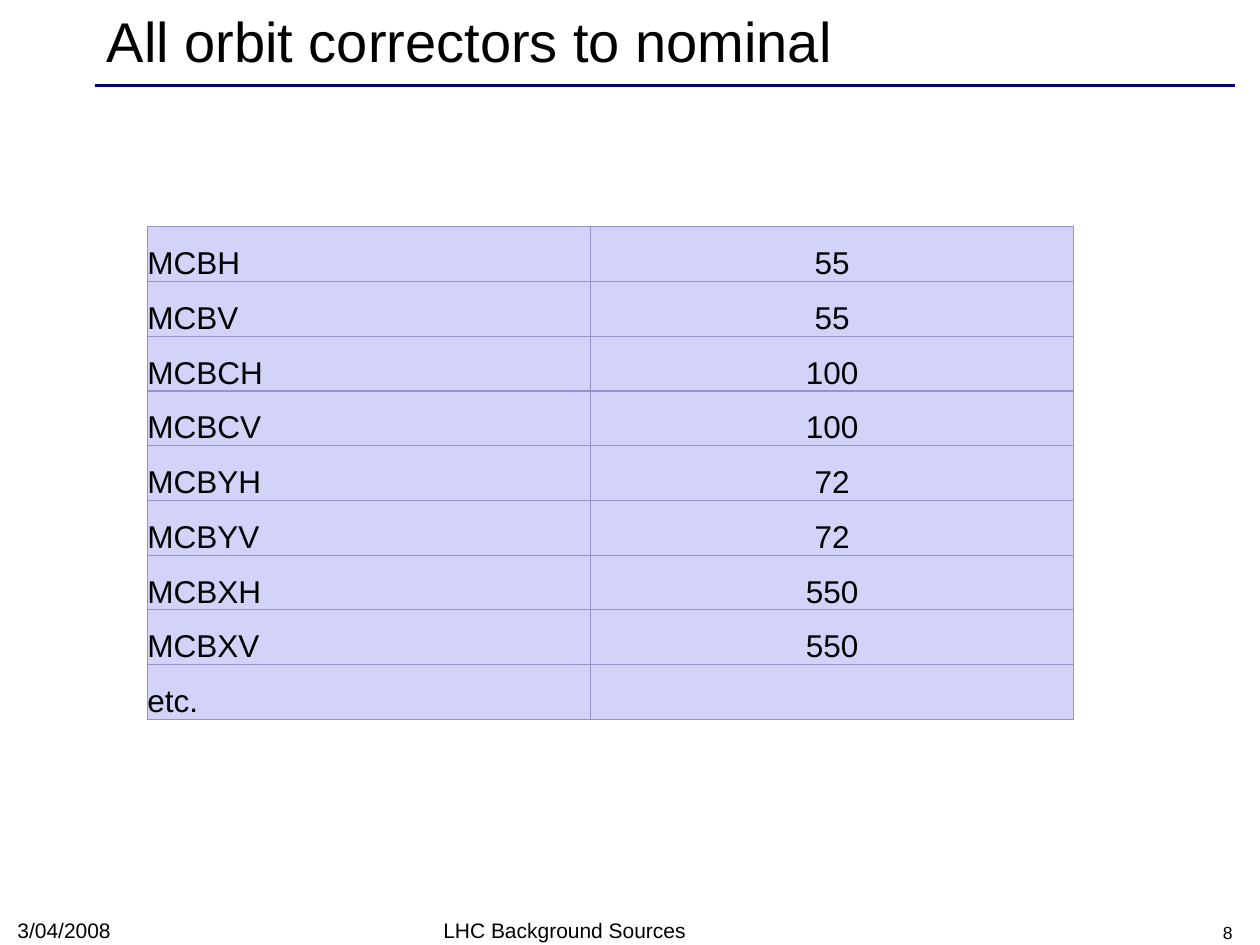
"""Build the slide listing the nominal settings of the orbit correctors."""
from dataclasses import dataclass

from lxml import etree
from pptx import Presentation
from pptx.dml.color import RGBColor
from pptx.enum import shapes, text
from pptx.oxml import ns
from pptx.util import Inches, Length, Pt


@dataclass(frozen=True)
class Theme:
    font: str = "Arial"
    ink: str = "000000"
    rule: str = "00007D"
    cell: str = "D3D3F9"
    border: str = "9494C9"
    title_size: float = 32
    table_size: float = 18
    footer_size: float = 12
    page_size: float = 10
    rule_width: float = 2
    border_width: float = 0.75


@dataclass(frozen=True)
class Label:
    wording: str
    left: float
    top: float
    width: float
    height: float
    size: float
    anchor: text.MSO_ANCHOR = text.MSO_ANCHOR.BOTTOM
    align: text.PP_ALIGN = text.PP_ALIGN.LEFT


@dataclass(frozen=True)
class Corrector:
    name: str
    nominal: str


THEME = Theme()
LABELS = (
    Label("All orbit correctors to nominal", 0.75, 0.03, 9, 0.57,
          THEME.title_size, text.MSO_ANCHOR.MIDDLE),
    Label("LHC Background Sources", 3.42, 7.25, 3.17, 0.28, THEME.footer_size),
    Label("8", 7.55, 7.25, 2.33, 0.28, THEME.page_size, align=text.PP_ALIGN.RIGHT),
    Label("3/04/2008", 0.04, 7.24, 2.33, 0.29, THEME.footer_size),
)
CORRECTORS = (
    Corrector("MCBH", "55"),
    Corrector("MCBV", "55"),
    Corrector("MCBCH", "100"),
    Corrector("MCBCV", "100"),
    Corrector("MCBYH", "72"),
    Corrector("MCBYV", "72"),
    Corrector("MCBXH", "550"),
    Corrector("MCBXV", "550"),
    Corrector("etc.", ""),
)
COLUMN_WIDTHS = (3.52, 3.83)
COLUMN_ALIGNS = (text.PP_ALIGN.LEFT, text.PP_ALIGN.CENTER)
TABLE_HEIGHT = 3.91


def write(paragraph, wording: str, size: float, align: text.PP_ALIGN) -> None:
    paragraph.text = wording
    paragraph.alignment = align
    paragraph.font.name = THEME.font
    paragraph.font.size = Pt(size)
    paragraph.font.color.rgb = RGBColor.from_string(THEME.ink)


def draw_label(slide, label: Label) -> None:
    place = map(Inches, (label.left, label.top, label.width, label.height))
    frame = slide.shapes.add_textbox(*place).text_frame
    frame.word_wrap = True
    frame.vertical_anchor = label.anchor
    write(frame.paragraphs[0], label.wording, label.size, label.align)


def draw_rule(slide) -> None:
    height = Inches(0.68)
    rule = slide.shapes.add_connector(
        shapes.MSO_CONNECTOR.STRAIGHT, Inches(0.75), height, Inches(9.8), height)
    rule.line.color.rgb = RGBColor.from_string(THEME.rule)
    rule.line.width = Pt(THEME.rule_width)
    etree.SubElement(rule._element.spPr, ns.qn("a:effectLst"))


def add_borders(cell) -> None:
    properties = cell._tc.get_or_add_tcPr()
    for position, side in enumerate(("lnL", "lnR", "lnT", "lnB")):
        border = etree.Element(ns.qn(f"a:{side}"), w=str(Pt(THEME.border_width)))
        fill = etree.SubElement(border, ns.qn("a:solidFill"))
        etree.SubElement(fill, ns.qn("a:srgbClr"), val=THEME.border)
        properties.insert(position, border)


def draw_cell(cell, wording: str, align: text.PP_ALIGN) -> None:
    cell.margin_left = cell.margin_right = Inches(0)
    cell.margin_top = cell.margin_bottom = Inches(0)
    cell.vertical_anchor = text.MSO_ANCHOR.BOTTOM
    cell.fill.solid()
    cell.fill.fore_color.rgb = RGBColor.from_string(THEME.cell)
    add_borders(cell)
    write(cell.text_frame.paragraphs[0], wording, THEME.table_size, align)


def draw_settings(slide, correctors: tuple[Corrector, ...]) -> None:
    height: Length = Inches(TABLE_HEIGHT)
    settings = slide.shapes.add_table(
        len(correctors), len(COLUMN_WIDTHS), Inches(1.17), Inches(1.8),
        Inches(sum(COLUMN_WIDTHS)), height).table
    settings.first_row = settings.horz_banding = False
    for column, width in zip(settings.columns, COLUMN_WIDTHS):
        column.width = Inches(width)
    for row, corrector in zip(settings.rows, correctors):
        entries = (corrector.name, corrector.nominal)
        for cell, wording, align in zip(row.cells, entries, COLUMN_ALIGNS):
            draw_cell(cell, wording, align)


def main() -> None:
    deck = Presentation()
    deck.slide_width, deck.slide_height = Inches(10), Inches(7.5)
    slide = deck.slides.add_slide(deck.slide_layouts[6])
    draw_rule(slide)
    for label in LABELS:
        draw_label(slide, label)
    draw_settings(slide, CORRECTORS)
    deck.save("out.pptx")


if __name__ == "__main__":
    main()
